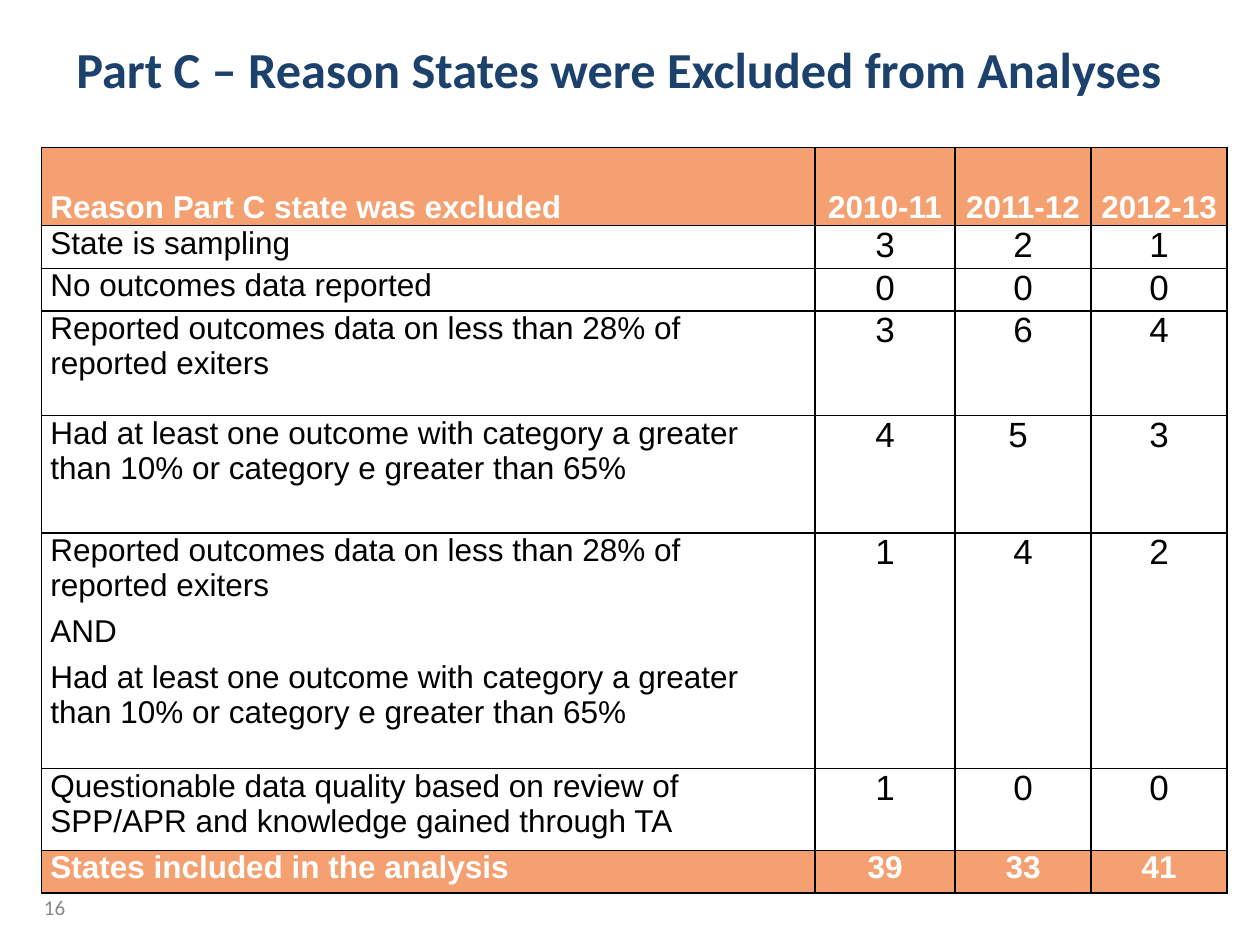
from lxml.etree import SubElement
from pptx import Presentation
from pptx.dml.color import RGBColor
from pptx.enum.text import MSO_ANCHOR, PP_ALIGN
from pptx.oxml.ns import qn
from pptx.util import Inches, Pt

NAVY = RGBColor(0x1B, 0x41, 0x6C)
GRAY = RGBColor(0x89, 0x89, 0x89)
ORANGE = RGBColor(0xF5, 0xA0, 0x70)
WHITE = RGBColor(0xFF, 0xFF, 0xFF)
BLACK = RGBColor(0x00, 0x00, 0x00)

LOW_REPORTING = "Reported outcomes data on less than 28% of reported exiters"
CATEGORY_LIMITS = ("Had at least one outcome with category a greater than 10% "
                   "or category e greater than 65%")

# Each row: height, paragraphs of the reason, values by year
ROWS = [
    (0.62, ["Reason Part C state was excluded"], ["2010-11", "2011-12", "2012-13"]),
    (0.34, ["State is sampling"], ["3", "2", "1"]),
    (0.34, ["No outcomes data reported"], ["0", "0", "0"]),
    (0.83, [LOW_REPORTING], ["3", "6", "4"]),
    (0.93, [CATEGORY_LIMITS], ["4", "5 ", "3"]),
    (1.87, [LOW_REPORTING, "AND", CATEGORY_LIMITS], ["1", "4", "2"]),
    (0.65, ["Questionable data quality based on review of SPP/APR and "
            "knowledge gained through TA"], ["1", "0", "0"]),
    (0.34, ["States included in the analysis"], ["39", "33", "41"]),
]
COLUMN_WIDTHS = [6.14, 1.11, 1.08, 1.08]


def add_run(paragraph, text, size, font, color, bold=False):
    run = paragraph.add_run()
    run.text = text
    run.font.size = Pt(size)
    run.font.name = font
    run.font.bold = bold
    run.font.color.rgb = color


def add_text(slide, box, text, size, color, anchor, alignment, bold=False):
    shape = slide.shapes.add_textbox(*map(Inches, box))
    frame = shape.text_frame
    frame.word_wrap = True
    frame.vertical_anchor = anchor
    paragraph = frame.paragraphs[0]
    paragraph.alignment = alignment
    add_run(paragraph, text, size, "Calibri", color, bold)


def set_borders(cell, color, width):
    properties = cell._tc.get_or_add_tcPr()
    for side in ("a:lnL", "a:lnR", "a:lnT", "a:lnB"):
        line = SubElement(properties, qn(side), w=str(Pt(width)))
        fill = SubElement(line, qn("a:solidFill"))
        SubElement(fill, qn("a:srgbClr"), val=str(color))


def fill_cell(cell, texts, size, alignment, highlighted):
    set_borders(cell, BLACK, 1)
    if highlighted:
        cell.fill.solid()
        cell.fill.fore_color.rgb = ORANGE
    else:
        cell.fill.background()
    cell.margin_left = cell.margin_right = Inches(0.07)
    cell.margin_top = cell.margin_bottom = 0
    frame = cell.text_frame
    for index, text in enumerate(texts):
        paragraph = frame.add_paragraph() if index else frame.paragraphs[0]
        paragraph.alignment = alignment
        if index:
            paragraph.space_before = Pt(3)
        if not highlighted:
            paragraph.space_after = Pt(3)
        add_run(paragraph, text, size, "Arial",
                WHITE if highlighted else BLACK, highlighted)


def add_reason_table(slide):
    frame = slide.shapes.add_table(
        len(ROWS), len(COLUMN_WIDTHS),
        Inches(0.33), Inches(1.17), Inches(sum(COLUMN_WIDTHS)),
        Inches(sum(height for height, _, _ in ROWS)))
    table = frame.table
    table.first_row = False
    table.horz_banding = False
    for column, width in zip(table.columns, COLUMN_WIDTHS):
        column.width = Inches(width)

    for row_index, (height, reason, values) in enumerate(ROWS):
        row = table.rows[row_index]
        row.height = Inches(height)
        highlighted = row_index in (0, len(ROWS) - 1)
        reason_cell, *value_cells = row.cells
        fill_cell(reason_cell, reason, 18, PP_ALIGN.LEFT, highlighted)
        for cell, value in zip(value_cells, values):
            fill_cell(cell, [value], 18 if highlighted else 20,
                      PP_ALIGN.CENTER, highlighted)

    # Header text sits at the bottom of its row
    for cell in table.rows[0].cells:
        cell.vertical_anchor = MSO_ANCHOR.BOTTOM
    heading = table.cell(0, 0).text_frame.paragraphs[0]
    heading.line_spacing = 1.15
    heading.space_after = Pt(10)


def main():
    presentation = Presentation()
    presentation.slide_width = Inches(10)
    presentation.slide_height = Inches(7.5)
    slide = presentation.slides.add_slide(presentation.slide_layouts[6])

    # Title
    add_text(slide, (0.17, 0.25, 9.58, 0.75),
             "Part C – Reason States were Excluded from Analyses ",
             28.8, NAVY, MSO_ANCHOR.TOP, PP_ALIGN.CENTER, bold=True)
    # Slide number
    add_text(slide, (0.25, 7, 1.75, 0.4), "16", 12, GRAY,
             MSO_ANCHOR.MIDDLE, PP_ALIGN.LEFT)
    # Exclusion reasons by year
    add_reason_table(slide)

    presentation.save("out.pptx")


if __name__ == "__main__":
    main()
